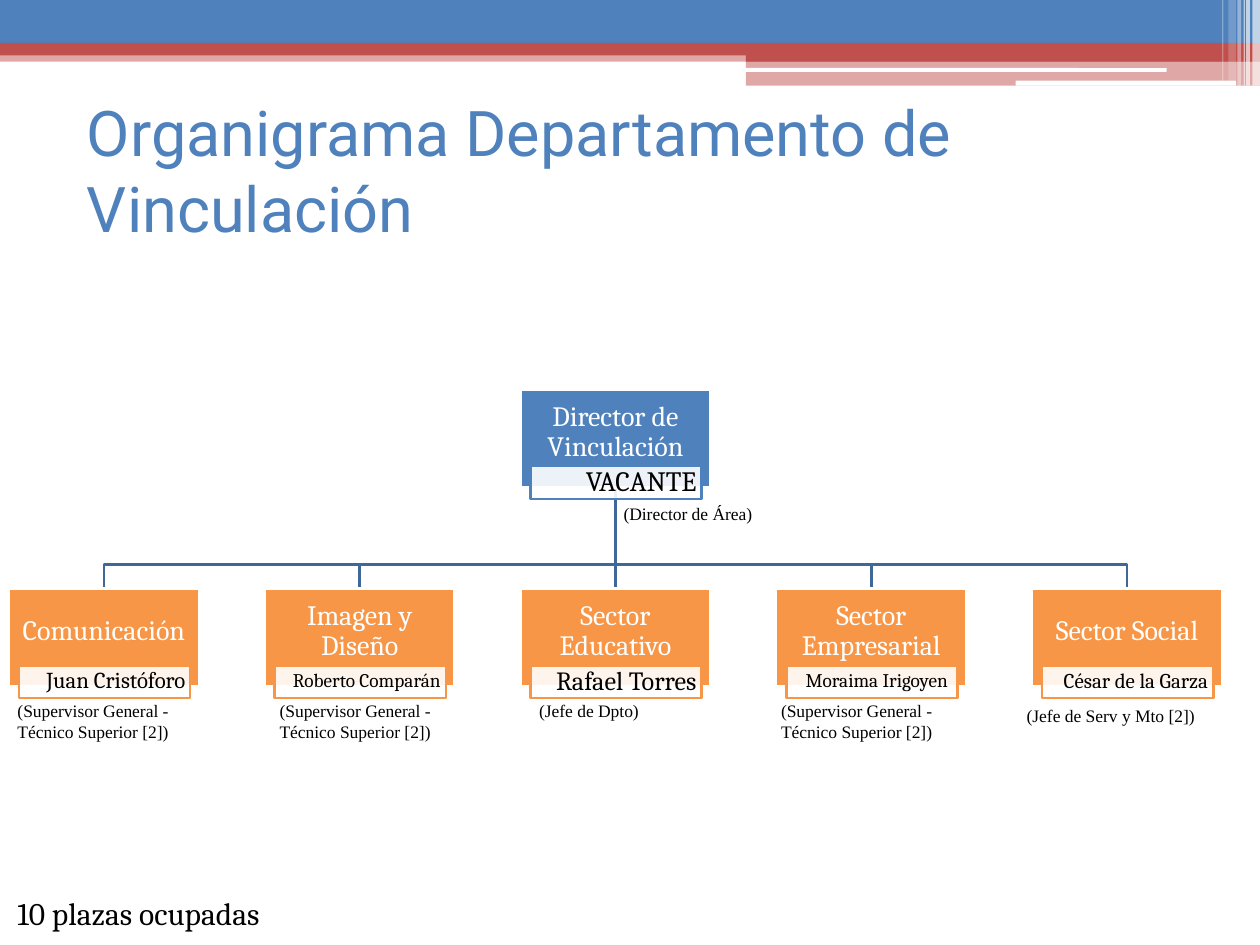
from lxml import etree
from pptx import Presentation
from pptx.dml.color import RGBColor
from pptx.enum.shapes import MSO_SHAPE
from pptx.enum.text import MSO_ANCHOR, MSO_AUTO_SIZE, PP_ALIGN
from pptx.oxml.ns import qn
from pptx.util import Inches, Pt

RECTANGLE, ROUNDED = MSO_SHAPE.RECTANGLE, MSO_SHAPE.ROUNDED_RECTANGLE
MIDDLE = MSO_ANCHOR.MIDDLE
LEFT, CENTER, RIGHT = PP_ALIGN.LEFT, PP_ALIGN.CENTER, PP_ALIGN.RIGHT
FIT_SHAPE, NO_FIT = MSO_AUTO_SIZE.SHAPE_TO_FIT_TEXT, MSO_AUTO_SIZE.NONE

BLUE = RGBColor(0x4F, 0x81, 0xBD)
RED = RGBColor(0xC0, 0x50, 0x4D)
ORANGE = RGBColor(0xF7, 0x96, 0x46)
LINE_BLUE = RGBColor(0x3F, 0x67, 0x97)
WHITE = RGBColor(0xFF, 0xFF, 0xFF)
BLACK = RGBColor(0, 0, 0)

CARD_WIDTH, CARD_HEIGHT, CARD_STEP = 1.51, 0.78, 2.03
DIRECTOR_TOP, SECTOR_TOP, BUS_Y = 3.09, 4.67, 4.48
FIRST_LEFT = 0.07
DIRECTOR_LEFT = FIRST_LEFT + 2 * CARD_STEP

SUPERVISOR = ["(Supervisor General -", "Técnico Superior [2])"]
# role, name, name size, note lines, note box
SECTORS = [
    ("Comunicación", "Juan Cristóforo", 13, SUPERVISOR, (0.04, 5.51, 1.42, 0.44)),
    ("Imagen y Diseño", "Roberto Comparán", 11, SUPERVISOR, (2.12, 5.51, 1.42, 0.44)),
    ("Sector Educativo", "Rafael Torres", 15, ["(Jefe de Dpto)"], (4.18, 5.51, 1.08, 0.27)),
    ("Sector Empresarial", "Moraima Irigoyen ", 11, SUPERVISOR, (6.1, 5.51, 1.42, 0.44)),
    ("Sector Social", "César de la Garza", 12, ["(Jefe de Serv y Mto [2])"],
     (8.05, 5.55, 1.56, 0.27)),
]


def to_inches(box):
    return [Inches(value) for value in box]


def add_block(slide, box, color, opacity=100, kind=RECTANGLE, line=None):
    shape = slide.shapes.add_shape(kind, *to_inches(box))
    shape.shadow.inherit = False
    shape.fill.solid()
    shape.fill.fore_color.rgb = color
    if opacity < 100:
        color_element = shape.fill._xPr.find(qn("a:solidFill"))[0]
        etree.SubElement(color_element, qn("a:alpha"), val=str(opacity * 1000))
    if line is None:
        shape.line.fill.background()
    else:
        shape.line.color.rgb = line
        shape.line.width = Pt(1.5)
    return shape


def write(paragraph, text, size, font, color, align=LEFT):
    paragraph.alignment = align
    run = paragraph.add_run()
    run.text = text
    run.font.size = Pt(size)
    run.font.name = font
    run.font.color.rgb = color


def fill_card_text(shape, text, size, color, align, side, bottom):
    frame = shape.text_frame
    frame.word_wrap = True
    frame.vertical_anchor = MIDDLE
    frame.margin_left = frame.margin_right = Inches(side)
    frame.margin_top, frame.margin_bottom = Inches(0.01), Inches(bottom)
    frame.paragraphs[0].line_spacing = 0.9
    write(frame.paragraphs[0], text, size, "Cambria", color, align)


def add_header(slide):
    # Coloured bands
    for box, color, opacity in [
        ((0, 0.4, 10, 0.09), RED, 50),
        ((0, 0, 10, 0.34), BLUE, 100),
        ((0, 0.34, 10, 0.1), RED, 100),
        ((5.92, 0.39, 4.08, 0.1), RED, 100),
        ((5.92, 0.48, 4.08, 0.2), RED, 50),
    ]:
        add_block(slide, box, color, opacity)
    # White bars
    for box in [(5.91, 0.54, 3.35, 0.03), (8.06, 0.64, 1.75, 0.04)]:
        add_block(slide, box, WHITE, kind=ROUNDED)
    # Translucent stripes at the right edge
    for left, width, height, opacity in [
        (9.94, 0.06, 0.68, 65), (9.89, 0.03, 0.68, 65), (9.87, 0.01, 0.68, 60),
        (9.82, 0.03, 0.68, 40), (9.75, 0.06, 0.64, 20), (9.7, 0.01, 0.64, 30),
    ]:
        add_block(slide, (left, 0, width, height), WHITE, opacity)


def add_title(slide, box, text):
    title = slide.shapes.title
    title.left, title.top, title.width, title.height = to_inches(box)
    frame = title.text_frame
    frame.auto_size = NO_FIT
    frame.vertical_anchor = MIDDLE
    write(frame.paragraphs[0], text, 36, "Roboto", BLUE)


def add_branch(slide, start_x, end_x):
    start_y = DIRECTOR_TOP + CARD_HEIGHT
    points = [(start_x, BUS_Y), (end_x, BUS_Y), (end_x, SECTOR_TOP)]
    if start_x == end_x:
        points = points[-1:]
    builder = slide.shapes.build_freeform(Inches(start_x), Inches(start_y))
    builder.add_line_segments([to_inches(point) for point in points], close=False)
    branch = builder.convert_to_shape()
    branch.shadow.inherit = False
    branch.fill.background()
    branch.line.color.rgb = LINE_BLUE
    branch.line.width = Pt(1.5)


def add_card(slide, left, top, color, role, name, name_size):
    card = add_block(slide, (left, top, CARD_WIDTH, CARD_HEIGHT), color, line=WHITE)
    fill_card_text(card, role, 16, WHITE, CENTER, 0.01, 0.11)
    label = add_block(slide, (left + 0.08, top + 0.61, 1.36, 0.26), WHITE, 90, line=color)
    fill_card_text(label, name, name_size, BLACK, RIGHT, 0.04, 0.01)


def add_note(slide, box, lines, size=10, font="Times New Roman"):
    frame = slide.shapes.add_textbox(*to_inches(box)).text_frame
    frame.word_wrap = False
    frame.auto_size = FIT_SHAPE
    for index, line in enumerate(lines):
        paragraph = frame.add_paragraph() if index else frame.paragraphs[0]
        write(paragraph, line, size, font, BLACK)


def add_chart_of_staff(slide):
    lefts = [FIRST_LEFT + index * CARD_STEP for index in range(len(SECTORS))]
    half = CARD_WIDTH / 2
    # Branches lie behind the cards
    for left in lefts:
        add_branch(slide, DIRECTOR_LEFT + half, left + half)
    # Director
    add_card(slide, DIRECTOR_LEFT, DIRECTOR_TOP, BLUE, "Director de Vinculación", "VACANTE", 16)
    add_note(slide, (4.85, 3.94, 1.25, 0.27), ["(Director de Área)"])
    # Sectors
    for left, (role, name, name_size, note, note_box) in zip(lefts, SECTORS):
        add_card(slide, left, SECTOR_TOP, ORANGE, role, name, name_size)
        add_note(slide, note_box, note)


def main():
    presentation = Presentation()
    presentation.slide_width, presentation.slide_height = Inches(10), Inches(7.5)
    slide = presentation.slides.add_slide(presentation.slide_layouts[5])
    add_header(slide)
    add_title(slide, (0.59, 0.76, 9, 1.17), "Organigrama Departamento de Vinculación")
    add_chart_of_staff(slide)
    add_note(slide, (0.04, 7.05, 2.33, 0.4), ["10 plazas ocupadas"], 18, "Cambria")
    presentation.save("out.pptx")


if __name__ == "__main__":
    main()
